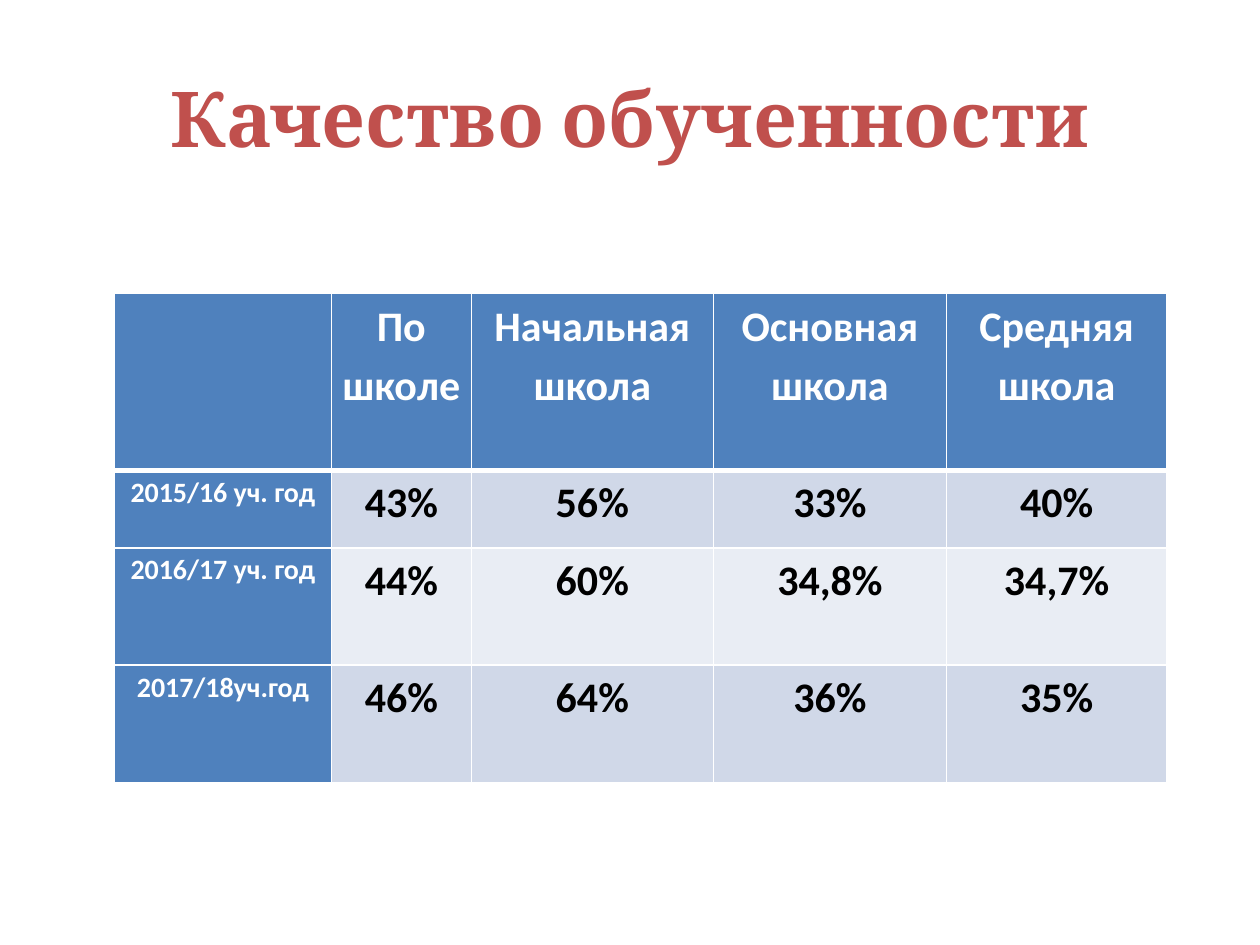
import pptx
import pptx.util
import pptx.dml.color
import pptx.enum.text
import pptx.oxml
import pptx.oxml.ns
from pptx.util import Cm

COLORS = {
    "title": "C0504D",
    "head": "4F81BD",
    "odd": "D0D8E8",
    "even": "E9EDF4",
    "light": "FFFFFF",
    "dark": "000000",
}
COL_WIDTHS = [4.37, 2.82, 4.88, 4.7, 4.44]
ROW_HEIGHTS = [3.56, 1.57, 2.36, 2.36]
ROWS = [
    ["", "По школе", "Начальная школа", "Основная школа", "Средняя школа"],
    ["2015/16 уч. год", "43%", "56%", "33%", "40%"],
    ["2016/17 уч. год", "44%", "60%", "34,8%", "34,7%"],
    ["2017/18уч.год", "46%", "64%", "36%", "35%"],
]


def rgb(name):
    return pptx.dml.color.RGBColor.from_string(COLORS[name])


def add_text(tf, text, font, size, color):
    p = tf.paragraphs[0]
    p.alignment = pptx.enum.text.PP_ALIGN.CENTER
    r = p.add_run()
    r.text = text
    r.font.name = font
    r.font.size = pptx.util.Pt(size)
    r.font.bold = True
    r.font.color.rgb = rgb(color)
    return p


def set_borders(cell, widths):
    """Draw the left, right, top and bottom lines, widths in points."""
    tcPr = cell._tc.get_or_add_tcPr()
    for i, (side, width) in enumerate(zip("LRTB", widths)):
        tcPr.insert(i, pptx.oxml.parse_xml(
            f'<a:ln{side} {pptx.oxml.ns.nsdecls("a")} w="{pptx.util.Pt(width)}">'
            f'<a:solidFill><a:srgbClr val="{COLORS["light"]}"/></a:solidFill>'
            f'</a:ln{side}>'))


def fill_title(s, left, top, width, height):
    sp = s.shapes.title
    sp.left, sp.top, sp.width, sp.height = left, top, width, height
    tf = sp.text_frame
    tf.word_wrap = True
    tf.vertical_anchor = pptx.enum.text.MSO_ANCHOR.MIDDLE
    add_text(tf, "Качество обученности", "Cambria", 44, "title")


def fill_cell(cell, text, row, col):
    is_head = row == 0 or col == 0
    cell.fill.solid()
    cell.fill.fore_color.rgb = rgb("head" if is_head else "odd" if row % 2 else "even")
    cell.margin_left = cell.margin_right = Cm(0.18)
    cell.margin_top = cell.margin_bottom = 0
    # The header row is parted from the body by a thick line
    set_borders(cell, [1, 1, 3 if row == 1 else 1, 3 if row == 0 else 1])
    if text:
        size = 16 if col == 0 else 24
        p = add_text(cell.text_frame, text, "Calibri", size, "light" if is_head else "dark")
        p.line_spacing = 1.15


def add_results(s, left, top, width, height):
    table = s.shapes.add_table(len(ROWS), len(COL_WIDTHS), left, top, width, height).table
    for column, share in zip(table.columns, COL_WIDTHS):
        column.width = int(width * share / sum(COL_WIDTHS))
    for line, share in zip(table.rows, ROW_HEIGHTS):
        line.height = int(height * share / sum(ROW_HEIGHTS))
    for row, texts in enumerate(ROWS):
        for col, text in enumerate(texts):
            fill_cell(table.cell(row, col), text, row, col)


def main():
    prs = pptx.Presentation()
    prs.slide_width, prs.slide_height = Cm(25.4), Cm(19.05)
    s = prs.slides.add_slide(prs.slide_layouts[5])
    # Title
    fill_title(s, Cm(1.27), Cm(0.76), Cm(22.86), Cm(3.18))
    # Results by school year and level
    add_results(s, Cm(2.31), Cm(5.92), Cm(21.21), Cm(9.85))
    prs.save("out.pptx")


if __name__ == "__main__":
    main()
